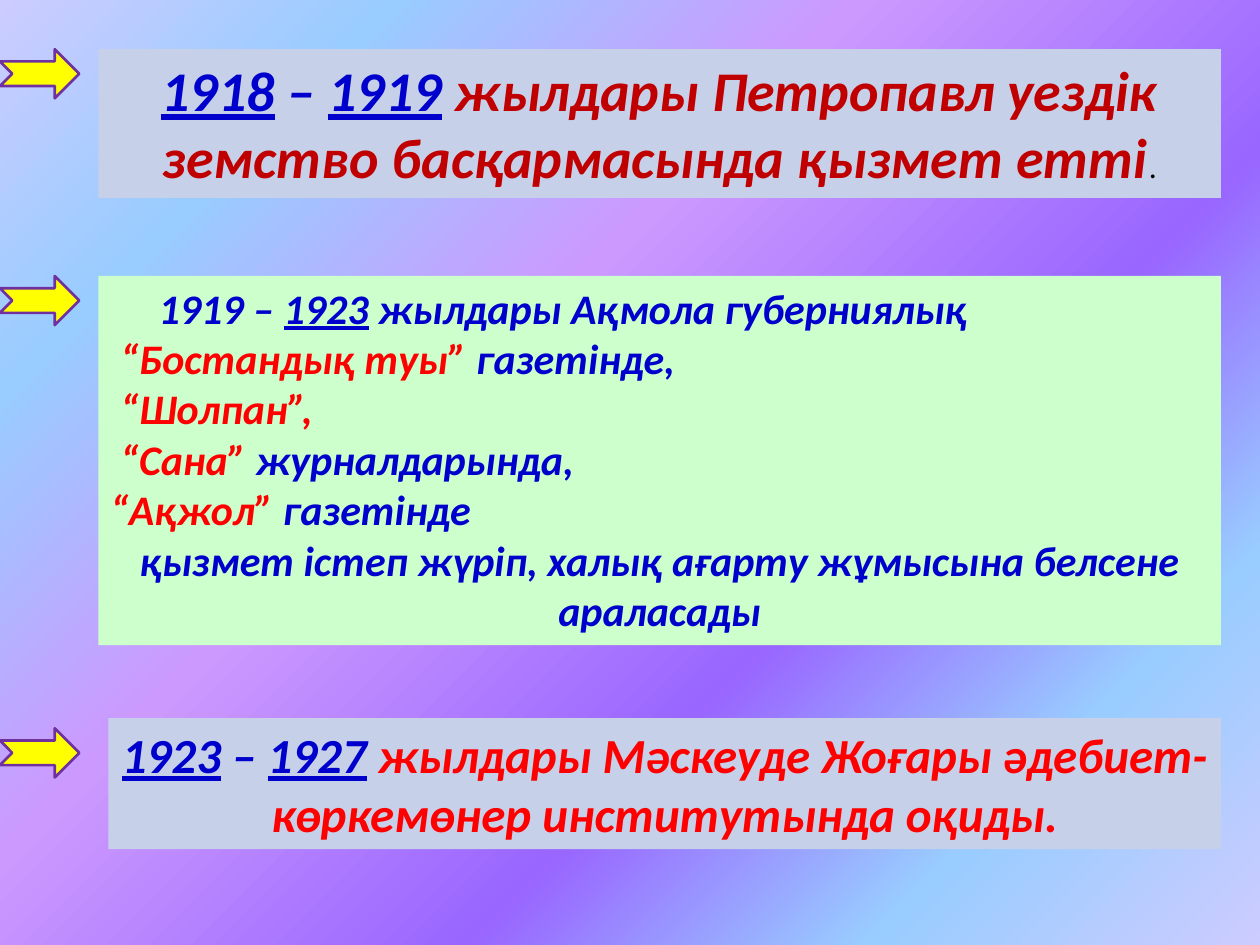
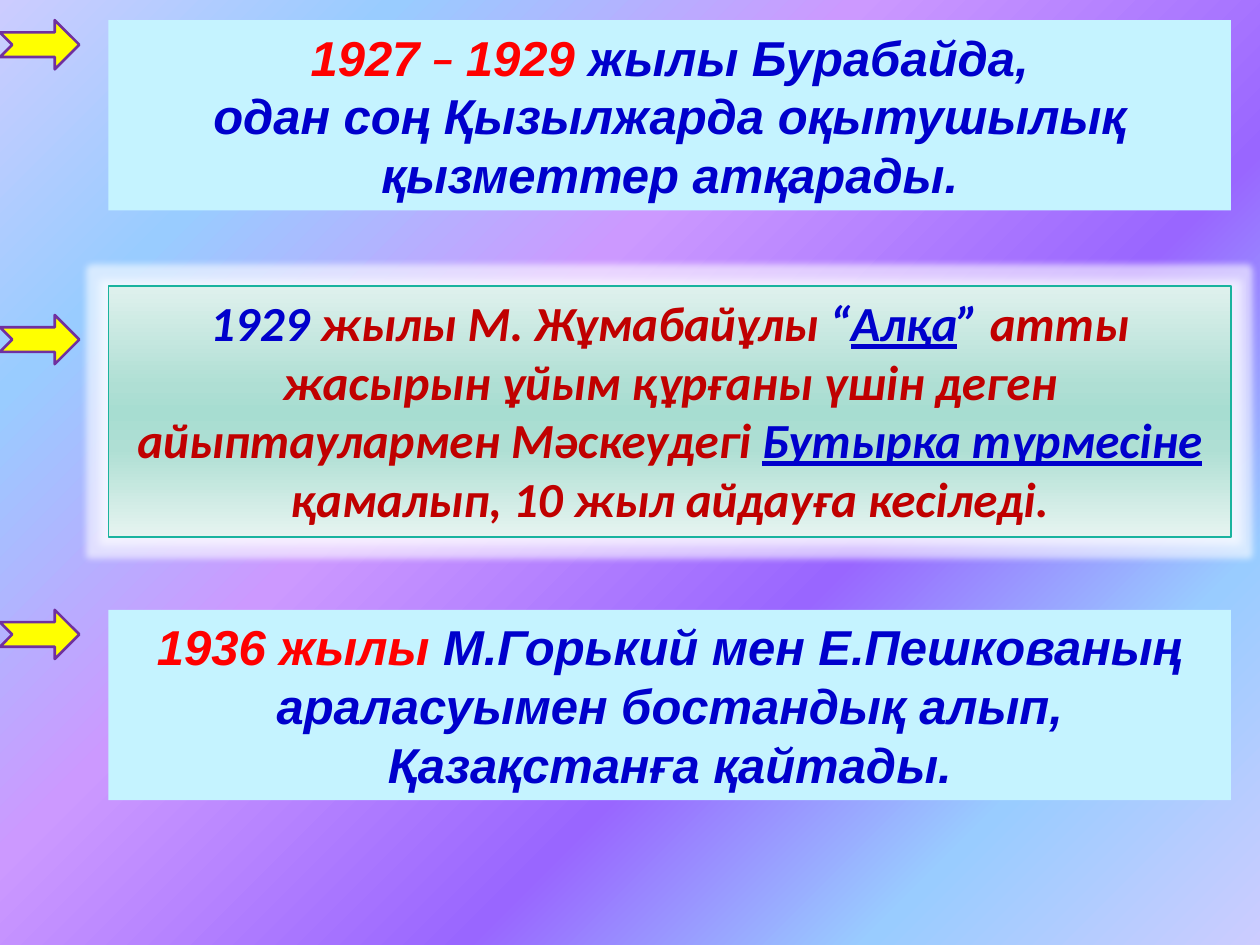
from dataclasses import dataclass

from lxml import etree
from pptx import Presentation
from pptx.dml.color import RGBColor
from pptx.enum.shapes import MSO_SHAPE
from pptx.enum.text import MSO_ANCHOR, MSO_AUTO_SIZE, PP_ALIGN
from pptx.oxml.ns import qn
from pptx.util import Inches, Pt

RECT, ARROW = MSO_SHAPE.RECTANGLE, MSO_SHAPE.NOTCHED_RIGHT_ARROW
TOP, MIDDLE = MSO_ANCHOR.TOP, MSO_ANCHOR.MIDDLE
LEFT, CENTER = PP_ALIGN.LEFT, PP_ALIGN.CENTER
GROW = MSO_AUTO_SIZE.SHAPE_TO_FIT_TEXT
COLS, ROWS = 100, 75


@dataclass(frozen=True)
class Theme:
    """Colours, fonts and type sizes of the deck."""
    blue: str = "0000CC"
    red: str = "FF0000"
    dark: str = "C00000"
    black: str = "000000"
    white: str = "FFFFFF"
    yellow: str = "FFFF00"
    purple: str = "7030A0"
    teal: str = "1AB39F"
    steel: str = "C7D0E9"
    mint: str = "CCFFCC"
    sky: str = "C5F3FF"
    serene: tuple = ((0, "DFF1ED"), (40, "AFDFD4"), (50, "A7DDD1"),
                     (65, "AFDFD4"), (100, "E6F4F0"))
    back: tuple = ((0, "CCCCFF"), (18, "99CCFF"), (36, "9966FF"),
                   (61, "CC99FF"), (82, "99CCFF"), (100, "CCCCFF"))
    main: str = "Calibri"
    plain: str = "Arial"
    large: int = 32
    mid: int = 28
    small: int = 24
    tiny: int = 18


T = Theme()
BLUE = {"color": T.blue}
RED = {"color": T.red}
DARK = {"color": T.dark}
LINK = {"color": T.blue, "underline": True}
DOT = {"color": T.black, "size": T.tiny, "bold": False, "italic": False}


def assign(item, values):
    """Set each named attribute of an item."""
    for name, value in values.items():
        setattr(item, name, value)


class Deck:
    """Holds the style, the show and the current slide."""

    def __init__(self, theme):
        """Start an empty deck."""
        self.theme = theme
        self.show = Presentation()
        assign(self.show, {"slide_width": Inches(10), "slide_height": Inches(7.5)})
        self.slide = None

    def page(self):
        """Add a slide with the shared backdrop."""
        self.slide = self.show.slides.add_slide(self.show.slide_layouts[6])
        self.blend(self.slide.background.fill, self.slide, self.theme.back, 225)

    def blend(self, fill, owner, stops, angle):
        """Fill with a gradient turned clockwise by an angle."""
        fill.gradient()
        fill.gradient_angle = 360 - angle
        stop_list = owner.element.xpath(".//a:gsLst")[0]
        for old in list(stop_list):
            stop_list.remove(old)
        for place, tone in stops:
            stop = etree.SubElement(stop_list, qn("a:gs"), pos=str(place * 1000))
            etree.SubElement(stop, qn("a:srgbClr"), val=tone)

    def shape(self, kind, col, row, wide, high, fill, edge=None, weight=1):
        """Add a preset shape placed on the grid."""
        unit_x = self.show.slide_width / COLS
        unit_y = self.show.slide_height / ROWS
        item = self.slide.shapes.add_shape(
            kind, round(col * unit_x), round(row * unit_y),
            round(wide * unit_x), round(high * unit_y))
        item.shadow.inherit = False
        if isinstance(fill, tuple):
            self.blend(item.fill, item, fill, 90)
        else:
            item.fill.solid()
            item.fill.fore_color.rgb = RGBColor.from_string(fill)
        if edge:
            item.line.color.rgb = RGBColor.from_string(edge)
            item.line.width = Pt(weight)
        else:
            item.line.fill.background()
        return item

    def arrow(self, row):
        """Add a marker at the left edge."""
        self.shape(ARROW, 0, row, 6.3, 3.9, self.theme.yellow, self.theme.purple, 1.5)

    def glow(self, item):
        """Add a soft white glow around a shape."""
        effects = item.element.spPr.find(qn("a:effectLst"))
        halo = etree.SubElement(effects, qn("a:glow"), rad=str(Inches(0.11)))
        tone = etree.SubElement(halo, qn("a:srgbClr"), val=self.theme.white)
        etree.SubElement(tone, qn("a:alpha"), val="60000")

    def label(self, item, lines, base, anchor=TOP):
        """Fill in lines, each an alignment, an indent and its runs."""
        frame = item.text_frame
        assign(frame, {"word_wrap": True, "auto_size": GROW, "vertical_anchor": anchor})
        for count, (align, indent, parts) in enumerate(lines):
            para = frame.add_paragraph() if count else frame.paragraphs[0]
            para.alignment = align
            if indent:
                para._p.get_or_add_pPr().set("indent", str(Inches(indent)))
            for text, style in parts:
                run = para.add_run()
                run.text = text
                look = {"bold": True, "italic": True, **base, **style}
                run.font.color.rgb = RGBColor.from_string(look.pop("color"))
                look["size"] = Pt(look["size"])
                assign(run.font, look)


def early(deck):
    """Build the slide on 1918 to 1927."""
    deck.page()
    for row in (3.9, 21.9, 57.8):
        deck.arrow(row)
    county = deck.shape(RECT, 7.8, 3.9, 89.1, 11.8, T.steel)
    deck.label(county, [(CENTER, 0, [
        ("1918", LINK), (" – ", BLUE), ("1919", LINK),
        (" жылдары Петропавл уездік земство басқармасында қызмет етті", DARK),
        (".", DOT)])], {"name": T.main, "size": T.large})
    press = deck.shape(RECT, 7.8, 21.9, 89.1, 29.3, T.mint)
    deck.label(press, [
        (LEFT, 0.38, [("1919 – ", BLUE), ("1923", LINK),
                      (" жылдары Ақмола губерниялық", BLUE)]),
        (LEFT, 0.08, [("“Бостандық туы”", RED), (" газетінде,", BLUE)]),
        (LEFT, 0.08, [("“Шолпан”,", RED)]),
        (LEFT, 0.08, [("“Сана”", RED), (" журналдарында,", BLUE)]),
        (LEFT, 0, [("“Ақжол”", RED), (" газетінде", BLUE)]),
        (CENTER, 0, [("қызмет істеп жүріп, халық ағарту жұмысына белсене араласады",
                      BLUE)]),
    ], {"name": T.main, "size": T.small})
    study = deck.shape(RECT, 8.6, 57, 88.3, 10.4, T.steel)
    deck.label(study, [(CENTER, 0, [
        ("1923", LINK), (" – ", BLUE), ("1927", LINK),
        (" жылдары Мәскеуде Жоғары әдебиет-көркемөнер институтында оқиды.", RED),
    ])], {"name": T.main, "size": T.mid})


def later(deck):
    """Build the slide on 1927 to 1936."""
    deck.page()
    for step in range(3):
        deck.arrow(1.6 + 23.4 * step)
    plain = {"name": T.plain, "size": T.mid}
    teach = deck.shape(RECT, 8.6, 1.6, 89.1, 15.1, T.sky)
    deck.label(teach, [
        (CENTER, 0, [("1927", RED), (" – ", {**RED, "name": T.main}), ("1929 ", RED),
                     ("жылы Бурабайда,", BLUE)]),
        (CENTER, 0, [("одан соң Қызылжарда оқытушылық қызметтер атқарады.", BLUE)]),
    ], plain, MIDDLE)
    trial = deck.shape(RECT, 8.6, 22.7, 89.1, 19.9, T.serene, T.teal, 0.94)
    deck.glow(trial)
    deck.label(trial, [(CENTER, 0, [
        ("1929", BLUE), (" жылы М. Жұмабайұлы", DARK), (" “", BLUE), ("Алқа", LINK),
        ("”", BLUE),
        (" атты жасырын ұйым құрғаны үшін деген айыптаулармен Мәскеудегі ", DARK),
        ("Бутырка түрмесіне", LINK),
        (" қамалып, 10 жыл айдауға кесіледі.", DARK),
    ])], {"name": T.main, "size": T.mid})
    free = deck.shape(RECT, 8.6, 48.4, 89.1, 15.1, T.sky)
    deck.label(free, [(CENTER, 0, [
        ("1936 жылы ", RED),
        ("М.Горький мен Е.Пешкованың араласуымен бостандық алып, Қазақстанға қайтады.",
         BLUE),
    ])], plain, MIDDLE)


def main():
    """Build and save both slides."""
    deck = Deck(T)
    early(deck)
    later(deck)
    deck.show.save("out.pptx")


if __name__ == "__main__":
    main()
